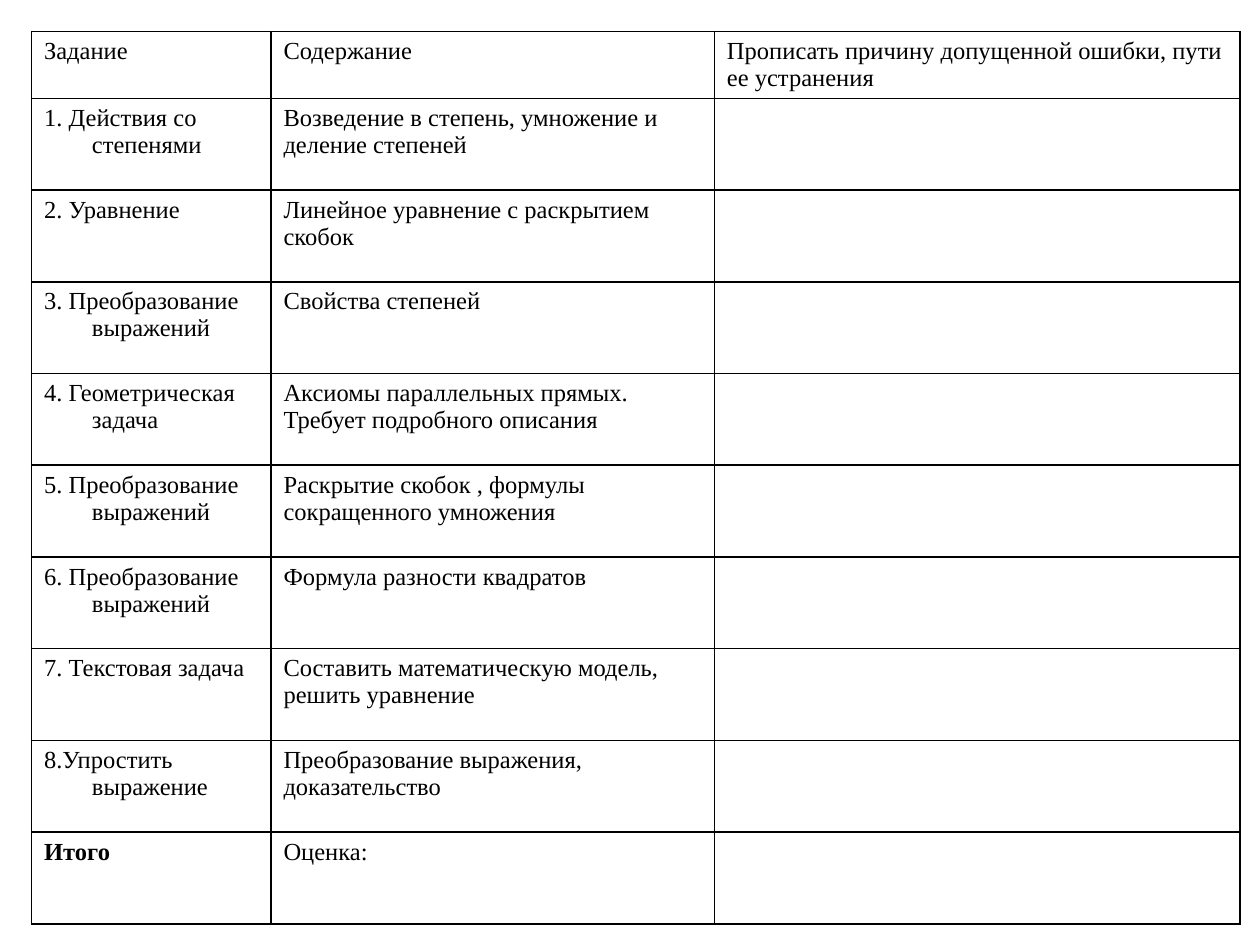
import pptx
import pptx.dml.color
import pptx.oxml
import pptx.oxml.ns
import pptx.util

COLORS = {"ink": "000000", "paper": "FFFFFF"}
COLUMN_WIDTHS = [19, 35.2, 41.7]
HEADER_HEIGHT, TASK_HEIGHT = 5.3, 7.28
HEADER = ["Задание", "Содержание", "Прописать причину допущенной ошибки, пути ее устранения"]
TASKS = [
    ["1. Действия со степенями", "Возведение в степень, умножение и деление степеней"],
    ["2. Уравнение", "Линейное уравнение с раскрытием скобок"],
    ["3. Преобразование выражений", "Свойства степеней"],
    ["4. Геометрическая задача", "Аксиомы параллельных прямых. Требует подробного описания"],
    ["5. Преобразование выражений", "Раскрытие скобок , формулы сокращенного умножения"],
    ["6. Преобразование выражений", "Формула разности квадратов"],
    ["7. Текстовая задача", "Составить математическую модель, решить уравнение"],
    ["8.Упростить выражение", "Преобразование выражения, доказательство"],
]
TOTAL = ["Итого", "Оценка:"]


class SlideBuilder:
    """Hold the style and the current slide, on a grid of 100 columns by 75 rows."""

    font_name = "Times New Roman"
    font_size = pptx.util.Pt(14)
    border_width = pptx.util.Pt(1)
    indent = pptx.util.Inches(0.38)

    def __init__(self, presentation):
        self.column = presentation.slide_width / 100
        self.row = presentation.slide_height / 75
        self.slide = presentation.slides.add_slide(presentation.slide_layouts[6])

    def add_table(self, left, top, widths, heights):
        frame = self.slide.shapes.add_table(
            len(heights), len(widths),
            int(left * self.column), int(top * self.row),
            int(sum(widths) * self.column), int(sum(heights) * self.row))
        table = frame.table
        table.first_row = table.horz_banding = False
        for column, width in zip(table.columns, widths):
            column.width = int(width * self.column)
        for row, height in zip(table.rows, heights):
            row.height = int(height * self.row)
        for cell in table.iter_cells():
            self.add_borders(cell)
            cell.fill.solid()
            cell.fill.fore_color.rgb = self.color("paper")
        return table

    def add_borders(self, cell):
        properties = cell._tc.get_or_add_tcPr()
        for side in ("lnL", "lnR", "lnT", "lnB"):
            properties.append(pptx.oxml.parse_xml(
                f'<a:{side} {pptx.oxml.ns.nsdecls("a")} w="{self.border_width}">'
                f'<a:solidFill><a:srgbClr val="{COLORS["ink"]}"/></a:solidFill></a:{side}>'))

    def add_text(self, cell, text, bold=False, hanging=False):
        paragraph = cell.text_frame.paragraphs[0]
        if hanging:
            properties = paragraph._p.get_or_add_pPr()
            properties.set("marL", str(self.indent))
            properties.set("indent", str(-self.indent))
        run = paragraph.add_run()
        run.text = text
        run.font.name = self.font_name
        run.font.size = self.font_size
        run.font.bold = bold
        run.font.color.rgb = self.color("ink")

    def color(self, name):
        return pptx.dml.color.RGBColor.from_string(COLORS[name])


def main():
    presentation = pptx.Presentation()
    presentation.slide_width = pptx.util.Inches(10)
    presentation.slide_height = pptx.util.Inches(7.5)
    builder = SlideBuilder(presentation)
    rows = [HEADER, *TASKS, TOTAL]
    heights = [HEADER_HEIGHT] + [TASK_HEIGHT] * (len(rows) - 1)
    table = builder.add_table(2.5, 2.5, COLUMN_WIDTHS, heights)
    for row_index, texts in enumerate(rows):
        for column_index, text in enumerate(texts):
            first = column_index == 0
            builder.add_text(
                table.cell(row_index, column_index), text,
                bold=first and texts is TOTAL,
                hanging=first and texts in TASKS)
    presentation.save("out.pptx")


if __name__ == "__main__":
    main()
